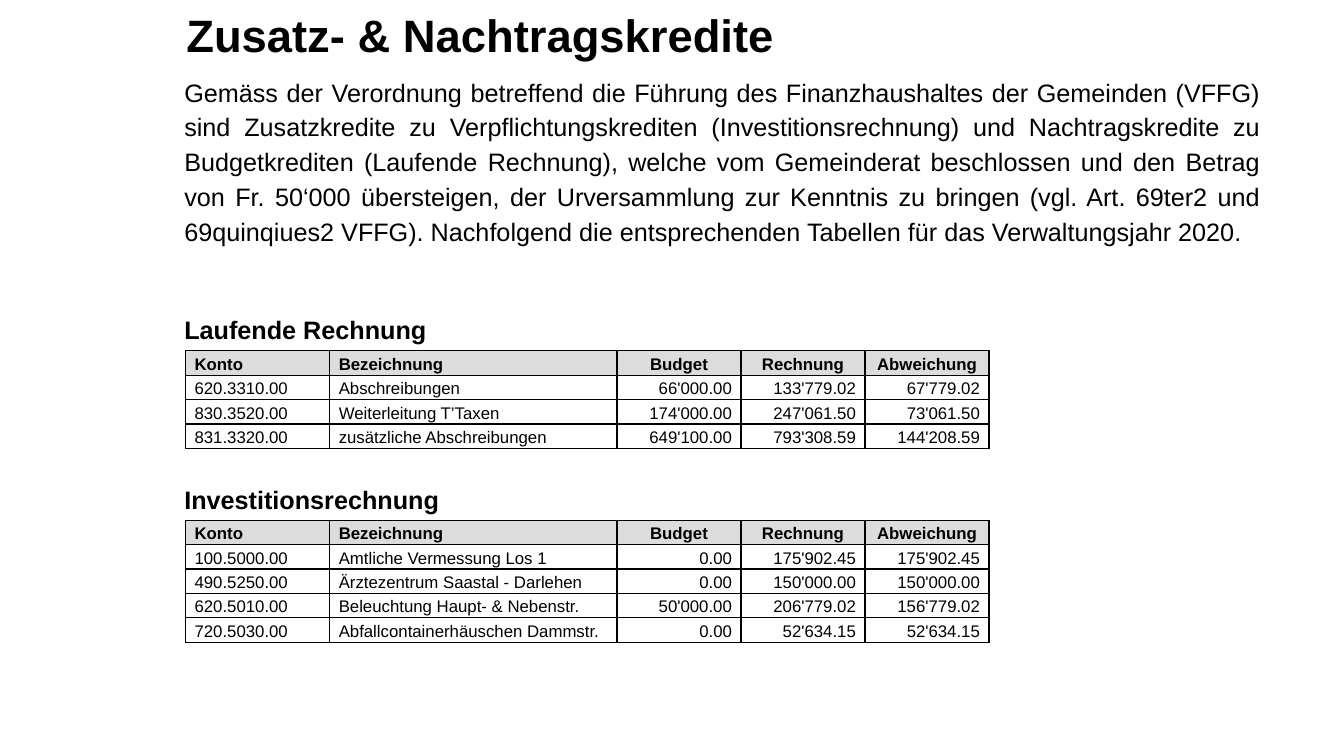
"""Build the slide on supplementary credits with its two account tables."""
from dataclasses import dataclass

from lxml import etree
from pptx import Presentation
from pptx.dml.color import RGBColor
from pptx.enum.text import MSO_ANCHOR, PP_ALIGN
from pptx.oxml.ns import qn
from pptx.util import Inches, Pt

LEFT, CENTER, RIGHT, JUSTIFY = PP_ALIGN.LEFT, PP_ALIGN.CENTER, PP_ALIGN.RIGHT, PP_ALIGN.JUSTIFY
MIDDLE = MSO_ANCHOR.MIDDLE


@dataclass(frozen=True)
class Theme:
    font: str = "Arial"
    ink: str = "000000"
    header_fill: str = "DCDCDC"
    title_size: float = 32.4
    body_size: float = 18
    table_size: float = 12
    border: float = 1


THEME = Theme()

TITLE = "Zusatz- & Nachtragskredite"
INTRODUCTION = (
    "Gemäss der Verordnung betreffend die Führung des Finanzhaushaltes der Gemeinden (VFFG) "
    "sind Zusatzkredite zu Verpflichtungskrediten (Investitionsrechnung) und Nachtragskredite "
    "zu Budgetkrediten (Laufende Rechnung), welche vom Gemeinderat beschlossen und den Betrag "
    "von Fr. 50‘000 übersteigen, der Urversammlung zur Kenntnis zu bringen (vgl. Art. 69ter2 und "
    "69quinqiues2 VFFG). Nachfolgend die entsprechenden Tabellen für das Verwaltungsjahr 2020."
)
HEADER = ("Konto", "Bezeichnung", "Budget", "Rechnung", "Abweichung")
CURRENT_ACCOUNT = [
    ("620.3310.00", "Abschreibungen", "66'000.00", "133'779.02", "67'779.02"),
    ("830.3520.00", "Weiterleitung T’Taxen", "174'000.00", "247'061.50", "73'061.50"),
    ("831.3320.00", "zusätzliche Abschreibungen", "649'100.00", "793'308.59", "144'208.59"),
]
INVESTMENT_ACCOUNT = [
    ("100.5000.00", "Amtliche Vermessung Los 1", "0.00", "175'902.45", "175'902.45"),
    ("490.5250.00", "Ärztezentrum Saastal - Darlehen", "0.00", "150'000.00", "150'000.00"),
    ("620.5010.00", "Beleuchtung Haupt- & Nebenstr.", "50'000.00", "206'779.02", "156'779.02"),
    ("720.5030.00", "Abfallcontainerhäuschen Dammstr.", "0.00", "52'634.15", "52'634.15"),
]
SECTIONS = [
    ("Laufende Rechnung", 35, 3.48, CURRENT_ACCOUNT),
    ("Investitionsrechnung", 86.6, 5.16, INVESTMENT_ACCOUNT),
]

TABLE_LEFT = 1.84
COLUMN_WIDTHS = (1.43, 2.85, 1.23, 1.23, 1.23)
ROW_HEIGHT = 0.97 / 4
TEXT_COLUMNS = 2


def write(paragraph, text, size=THEME.body_size, bold=False, align=LEFT,
          line_spacing=1.15, before=None, after=None):
    """Fill a paragraph with formatted text."""
    paragraph.alignment = align
    paragraph.line_spacing = line_spacing
    if before is not None:
        paragraph.space_before = Pt(before)
    if after is not None:
        paragraph.space_after = Pt(after)
    run = paragraph.add_run()
    run.text = text
    run.font.name = THEME.font
    run.font.size = Pt(size)
    run.font.bold = bold
    run.font.color.rgb = RGBColor.from_string(THEME.ink)


def add_text_frame(slide, left, top, width, height):
    """Add a wrapping text box and return its text frame."""
    box = slide.shapes.add_textbox(Inches(left), Inches(top), Inches(width), Inches(height))
    box.text_frame.word_wrap = True
    return box.text_frame


def add_borders(cell):
    """Draw a solid line on each side of a cell, ahead of its fill."""
    properties = cell._tc.get_or_add_tcPr()
    for position, side in enumerate(("lnL", "lnR", "lnT", "lnB")):
        line = etree.Element(qn(f"a:{side}"), w=str(Pt(THEME.border)))
        fill = etree.SubElement(line, qn("a:solidFill"))
        etree.SubElement(fill, qn("a:srgbClr"), val=THEME.ink)
        properties.insert(position, line)


def add_account_table(slide, top, entries):
    """Add one account table with a shaded header row."""
    rows = [HEADER, *entries]
    table = slide.shapes.add_table(
        len(rows), len(HEADER), Inches(TABLE_LEFT), Inches(top),
        Inches(sum(COLUMN_WIDTHS)), Inches(ROW_HEIGHT * len(rows))).table
    table.first_row = table.horz_banding = False
    for column, width in zip(table.columns, COLUMN_WIDTHS):
        column.width = Inches(width)
    for row_index, values in enumerate(rows):
        table.rows[row_index].height = Inches(ROW_HEIGHT)
        is_header = row_index == 0
        for column_index, value in enumerate(values):
            cell = table.cell(row_index, column_index)
            cell.vertical_anchor = MIDDLE
            cell.margin_left = cell.margin_right = Inches(0.09)
            cell.margin_top = cell.margin_bottom = 0
            if is_header:
                cell.fill.solid()
                cell.fill.fore_color.rgb = RGBColor.from_string(THEME.header_fill)
            else:
                cell.fill.background()
            add_borders(cell)
            number_align = CENTER if is_header else RIGHT
            write(cell.text_frame.paragraphs[0], value, size=THEME.table_size, bold=is_header,
                  align=LEFT if column_index < TEXT_COLUMNS else number_align)


def main():
    """Lay out the slide and save it."""
    presentation = Presentation()
    presentation.slide_width, presentation.slide_height = Inches(13.33), Inches(7.5)
    slide = presentation.slides.add_slide(presentation.slide_layouts[6])

    title = add_text_frame(slide, 1.75, 0.08, 11.14, 0.59)
    title.vertical_anchor = MIDDLE
    write(title.paragraphs[0], TITLE, size=THEME.title_size, bold=True, line_spacing=0.9)

    body = add_text_frame(slide, 1.73, 0.67, 10.87, 4.49)
    write(body.paragraphs[0], INTRODUCTION, align=JUSTIFY, after=10)
    for heading, gap, top, entries in SECTIONS:
        write(body.add_paragraph(), heading, bold=True, align=JUSTIFY, before=gap, after=10)
        add_account_table(slide, top, entries)

    presentation.save("out.pptx")


if __name__ == "__main__":
    main()
